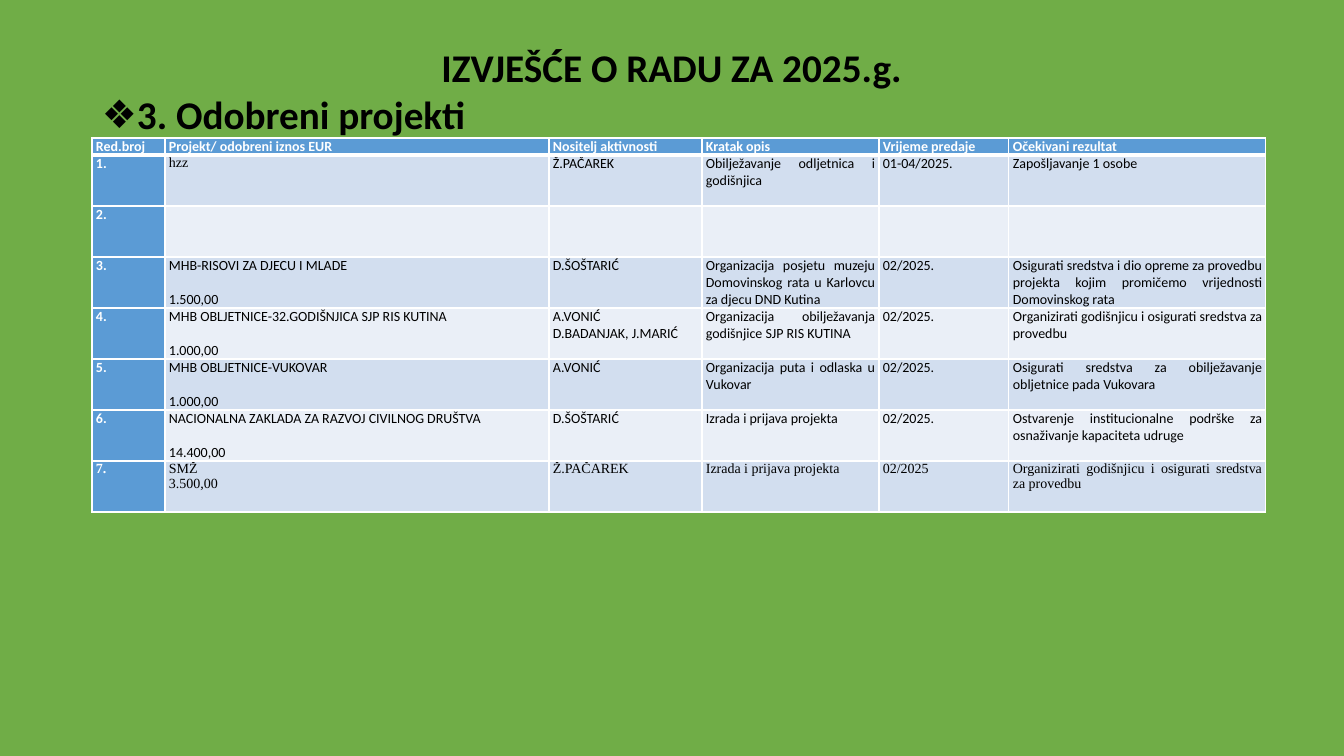
"""Build the slide that lists the approved projects of 2025."""
from dataclasses import dataclass

from lxml.etree import SubElement
from pptx import Presentation
from pptx.dml.color import RGBColor
from pptx.enum.text import MSO_ANCHOR, MSO_AUTO_SIZE, PP_ALIGN
from pptx.oxml import parse_xml
from pptx.oxml.ns import nsdecls, qn
from pptx.util import Pt

EMU_PER_PX = 914400 / 100.8


@dataclass(frozen=True)
class Theme:
    background: str = "70AD47"
    accent: str = "5B9BD5"
    bands: tuple = ("D2DEEF", "EAEFF7")
    dark: str = "000000"
    light: str = "FFFFFF"
    sans: str = "Calibri"
    serif: str = "Times New Roman"
    heading: int = 28
    cell: int = 10


HEADER = ["Red.broj", "Projekt/ odobreni iznos EUR", "Nositelj aktivnosti",
          "Kratak opis", "Vrijeme predaje", "Očekivani rezultat"]
PROJECTS = [
    ["hzz", "Ž.PAČAREK", "Obilježavanje odljetnica i godišnjica",
     "01-04/2025.", "Zapošljavanje 1 osobe"],
    ["", "", "", "", ""],
    ["MHB-RISOVI ZA DJECU I MLADE\n1.500,00", "D.ŠOŠTARIĆ",
     "Organizacija posjetu muzeju Domovinskog rata u Karlovcu za djecu DND Kutina",
     "02/2025.",
     "Osigurati sredstva i dio opreme za provedbu projekta kojim promičemo "
     "vrijednosti Domovinskog rata"],
    ["MHB OBLJETNICE-32.GODIŠNJICA SJP RIS KUTINA\n1.000,00",
     "A.VONIĆ\nD.BADANJAK, J.MARIĆ",
     "Organizacija obilježavanja godišnjice SJP RIS KUTINA", "02/2025.",
     "Organizirati godišnjicu i osigurati sredstva za provedbu"],
    ["MHB OBLJETNICE-VUKOVAR\n1.000,00", "A.VONIĆ",
     "Organizacija puta i odlaska u Vukovar", "02/2025.",
     "Osigurati sredstva za obilježavanje obljetnice pada Vukovara"],
    ["NACIONALNA ZAKLADA ZA RAZVOJ CIVILNOG DRUŠTVA\n14.400,00", "D.ŠOŠTARIĆ",
     "Izrada i prijava projekta", "02/2025.",
     "Ostvarenje institucionalne podrške za osnaživanje kapaciteta udruge"],
    ["SMŽ\n3.500,00", "Ž.PAČAREK", "Izrada i prijava projekta", "02/2025",
     "Organizirati godišnjicu i osigurati sredstva za provedbu"],
]
SERIF_CELLS = {(1, 1)} | {(7, col) for col in range(6)}
COLUMN_WIDTHS = [73, 384, 153, 177, 130, 257]
HEADER_HEIGHT, ROW_HEIGHT = 17, 51


class SlideBuilder:
    """Adds styled elements to one slide."""

    def __init__(self, prs, theme):
        self.theme = theme
        self.s = prs.slides.add_slide(prs.slide_layouts[5])
        fill = self.s.background.fill
        fill.solid()
        fill.fore_color.rgb = RGBColor.from_string(theme.background)

    @staticmethod
    def px(n):
        return round(n * EMU_PER_PX)

    def add_run(self, p, text, size, color, bold=False, font=None):
        r = p.add_run()
        r.text = text
        r.font.size = Pt(size)
        r.font.bold = bold
        r.font.name = font or self.theme.sans
        r.font.color.rgb = RGBColor.from_string(color)

    def place(self, sp, x, y, w, h):
        sp.left, sp.top, sp.width, sp.height = map(self.px, (x, y, w, h))

    def heading(self, sp, text, align, anchor):
        tf = sp.text_frame
        tf.word_wrap = True
        tf.auto_size = MSO_AUTO_SIZE.NONE
        tf.vertical_anchor = anchor
        p = tf.paragraphs[0]
        p.alignment = align
        p.line_spacing = 0.9
        self.add_run(p, text, self.theme.heading, self.theme.dark, True)
        return p

    def title(self, text, x, y, w, h):
        sp = self.s.shapes.title
        self.place(sp, x, y, w, h)
        self.heading(sp, text, PP_ALIGN.CENTER, MSO_ANCHOR.MIDDLE)

    def bullet(self, text, x, y, w, h):
        sp = self.s.shapes.add_textbox(*map(self.px, (x, y, w, h)))
        p = self.heading(sp, text, PP_ALIGN.LEFT, MSO_ANCHOR.TOP)
        pPr = p._p.get_or_add_pPr()
        pPr.set("marL", "228600")
        pPr.set("indent", "-228600")
        SubElement(pPr, qn("a:buFont")).set("typeface", self.theme.sans)
        SubElement(pPr, qn("a:buChar")).set("char", "❖")

    def borders(self, cell, top=1, bottom=1):
        tcPr = cell._tc.get_or_add_tcPr()
        sides = {"lnL": 1, "lnR": 1, "lnT": top, "lnB": bottom}
        for i, (side, width) in enumerate(sides.items()):
            tcPr.insert(i, parse_xml(
                f'<a:{side} {nsdecls("a")} w="{Pt(width)}"><a:solidFill>'
                f'<a:srgbClr val="{self.theme.light}"/></a:solidFill></a:{side}>'))

    def cell(self, cell, text, fill, color, bold, font, gap):
        cell.margin_left = cell.margin_right = self.px(4)
        cell.margin_top = cell.margin_bottom = 0
        cell.fill.solid()
        cell.fill.fore_color.rgb = RGBColor.from_string(fill)
        tf = cell.text_frame
        for i, line in enumerate(text.split("\n") if text else []):
            p = tf.add_paragraph() if i else tf.paragraphs[0]
            p.alignment = PP_ALIGN.JUSTIFY
            if i and gap:
                p.space_before = Pt(gap)
            self.add_run(p, line, self.theme.cell, color, bold, font)

    def table(self, rows, x, y):
        t = self.theme
        heights = [HEADER_HEIGHT] + [ROW_HEIGHT] * (len(rows) - 1)
        size = map(self.px, (x, y, sum(COLUMN_WIDTHS), sum(heights)))
        tbl = self.s.shapes.add_table(len(rows), len(COLUMN_WIDTHS), *size).table
        tbl.first_row = tbl.horz_banding = False
        for col, w in zip(tbl.columns, COLUMN_WIDTHS):
            col.width = self.px(w)
        for i, (row, h) in enumerate(zip(rows, heights)):
            tbl.rows[i].height = self.px(h)
            for j, text in enumerate(row):
                label = i == 0 or j == 0
                serif = (i, j) in SERIF_CELLS
                self.cell(tbl.cell(i, j), text,
                          fill=t.accent if label else t.bands[(i - 1) % 2],
                          color=t.light if label else t.dark, bold=label,
                          font=t.serif if serif else t.sans,
                          gap=12 if j == 1 and not serif else 0)
                self.borders(tbl.cell(i, j), top=3 if i == 1 else 1,
                             bottom=3 if i == 0 else 1)


def main():
    prs = Presentation()
    prs.slide_width, prs.slide_height = map(SlideBuilder.px, (1344, 756))
    slide = SlideBuilder(prs, Theme())
    slide.title("IZVJEŠĆE O RADU ZA 2025.g.", 92, 23, 1159, 94)
    slide.bullet("3. Odobreni projekti", 92, 91, 1159, 637)
    numbered = [[f"{n}.", *project] for n, project in enumerate(PROJECTS, 1)]
    slide.table([HEADER, *numbered], 92, 138)
    prs.save("out.pptx")


if __name__ == "__main__":
    main()
